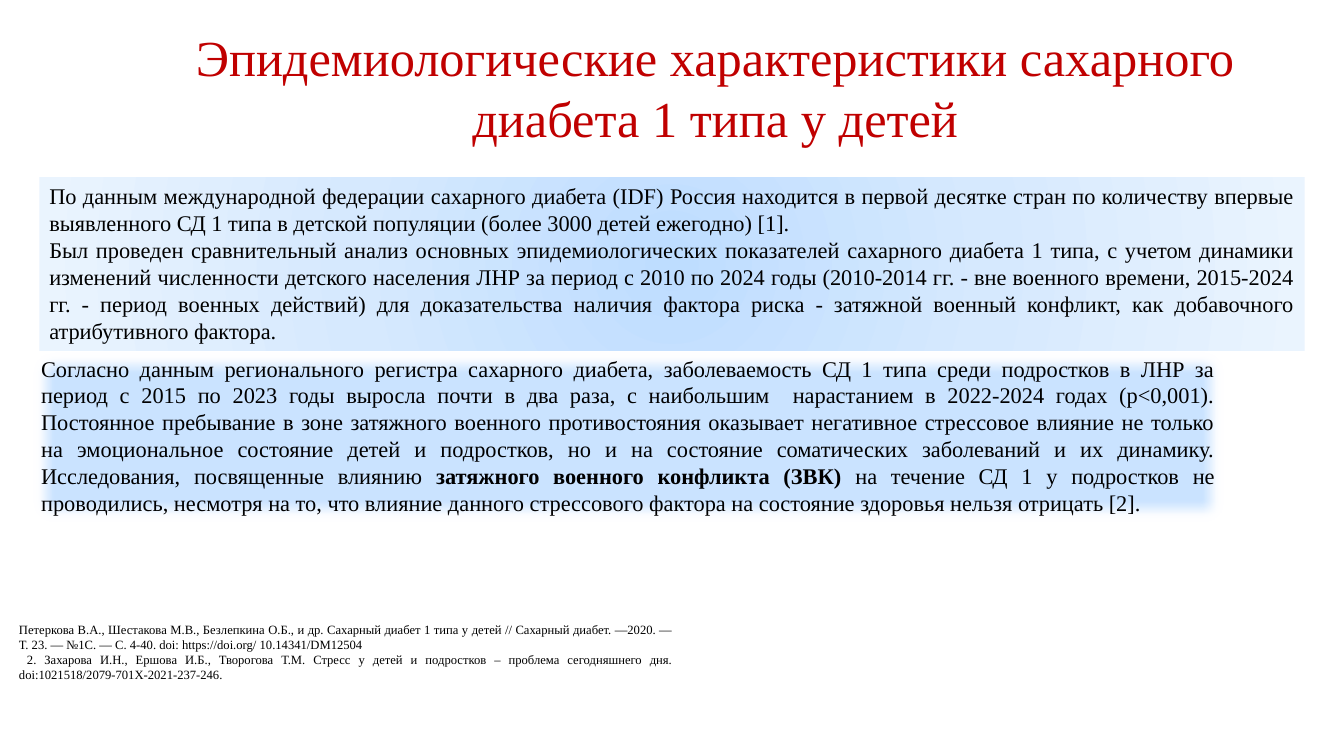
from dataclasses import dataclass

import lxml.etree
import pptx
import pptx.dml.color
import pptx.enum.shapes
import pptx.enum.text
import pptx.oxml
import pptx.oxml.ns
import pptx.util

Inches = pptx.util.Inches
ALIGN = pptx.enum.text.PP_ALIGN
NS = pptx.oxml.ns.nsdecls("a")
qn = pptx.oxml.ns.qn

COLORS = {"title": "C00000", "text": "000000", "panel": "CAE3FF", "border": "0F9ED5",
          "inner": "BEDDFF", "middle": "D6E9FE", "outer": "EAF4FE"}
FONT = "Times New Roman"


@dataclass
class Run:
    text: str
    bold: bool = False


@dataclass
class Block:
    left: float
    top: float
    width: float
    height: float
    paragraphs: list[list[Run]]


def rgb(name: str) -> pptx.dml.color.RGBColor:
    return pptx.dml.color.RGBColor.from_string(COLORS[name])


def add_run(p, text: str, *, size: float, color: str = "text", bold: bool = False) -> None:
    r = p.add_run()
    r.text = text
    r.font.name = FONT
    r.font.size = pptx.util.Pt(size)
    r.font.bold = bold
    r.font.color.rgb = rgb(color)


def fill_text(sp, block: Block, *, size: float, color: str = "text", align=ALIGN.JUSTIFY,
              anchor=pptx.enum.text.MSO_ANCHOR.TOP) -> None:
    tf = sp.text_frame
    tf.word_wrap = True
    tf.auto_size = pptx.enum.text.MSO_AUTO_SIZE.SHAPE_TO_FIT_TEXT
    tf.vertical_anchor = anchor
    for i, runs in enumerate(block.paragraphs):
        p = tf.add_paragraph() if i else tf.paragraphs[0]
        p.alignment = align
        for run in runs:
            add_run(p, run.text, size=size, color=color, bold=run.bold)


def bounds(block: Block) -> list[int]:
    return [Inches(v) for v in (block.left, block.top, block.width, block.height)]


def add_panel(slide, block: Block):
    sp = slide.shapes.add_shape(pptx.enum.shapes.MSO_SHAPE.RECTANGLE, *bounds(block))
    sp.shadow.inherit = False
    sp.fill.solid()
    sp.fill.fore_color.rgb = rgb("panel")
    sp.line.fill.background()
    fill_text(sp, block, size=16)
    return sp


def set_radial_fill(sp, names: list[str]) -> None:
    stops = "".join(
        f'<a:gs pos="{100000 * i // (len(names) - 1)}"><a:srgbClr val="{COLORS[n]}"/></a:gs>'
        for i, n in enumerate(names))
    grad = pptx.oxml.parse_xml(
        f'<a:gradFill {NS} rotWithShape="1"><a:gsLst>{stops}</a:gsLst><a:path path="circle">'
        '<a:fillToRect l="50000" t="50000" r="50000" b="50000"/></a:path></a:gradFill>')
    sp_pr = sp.element.spPr
    sp_pr.replace(sp_pr.find(qn("a:solidFill")), grad)


def set_soft_edge(sp, radius: int) -> None:
    effects = sp.element.spPr.find(qn("a:effectLst"))
    lxml.etree.SubElement(effects, qn("a:softEdge")).set("rad", str(radius))


TITLE = Block(1.25, 0.21, 11.69, 1.31, [
    [Run("Эпидемиологические характеристики сахарного диабета 1 типа у детей")]])

OVERVIEW = Block(0.39, 1.76, 12.55, 1.72, [
    [Run("По данным международной федерации сахарного диабета (IDF) Россия находится в первой "
         "десятке стран по количеству впервые выявленного СД 1 типа в детской популяции (более "
         "3000 детей ежегодно) [1].")],
    [Run("Был проведен сравнительный анализ основных эпидемиологических показателей сахарного "
         "диабета 1 типа, с учетом динамики изменений численности детского населения ЛНР за "
         "период с 2010 по 2024 годы (2010-2014 гг. - вне военного времени, 2015-2024 гг. - "
         "период военных действий) для доказательства наличия фактора риска - затяжной военный "
         "конфликт, как добавочного атрибутивного фактора.")]])

REGISTRY = Block(0.31, 3.47, 11.84, 1.72, [
    [Run("Согласно данным регионального регистра сахарного диабета, заболеваемость СД 1 типа "
         "среди подростков в ЛНР за период с 2015 по 2023 годы выросла почти в два раза, с "
         "наибольшим  нарастанием в 2022-2024 годах (р<0,001). Постоянное пребывание в зоне "
         "затяжного военного противостояния оказывает негативное стрессовое влияние не только "
         "на эмоциональное состояние детей и подростков, но и на состояние соматических "
         "заболеваний и их динамику. Исследования, посвященные влиянию "),
     Run("затяжного военного конфликта (ЗВК) ", bold=True),
     Run("на течение СД 1 у подростков не проводились, несмотря на то, что влияние данного "
         "стрессового фактора на состояние здоровья нельзя отрицать [2].")]])

REFERENCES = Block(0.09, 6.12, 6.67, 0.71, [
    [Run("Петеркова В.А., Шестакова М.В., Безлепкина О.Б., и др. Сахарный диабет 1 типа у "
         "детей // Сахарный диабет. —2020. — Т. 23. — №1С. — С. 4-40. doi: https://doi.org/ "
         "10.14341/DM12504")],
    [Run(" 2. Захарова И.Н., Ершова И.Б., Творогова Т.М. Стресс у детей и подростков – "
         "проблема сегодняшнего дня. doi:1021518/2079-701Х-2021-237-246.")]])


def main() -> None:
    prs = pptx.Presentation()
    prs.slide_width, prs.slide_height = Inches(13.33), Inches(7.5)
    slide = prs.slides.add_slide(prs.slide_layouts[5])

    # Title
    title = slide.shapes.title
    title.left, title.top, title.width, title.height = bounds(TITLE)
    fill_text(title, TITLE, size=36, color="title", align=ALIGN.CENTER)

    # Overview panel with a radial gradient
    overview = add_panel(slide, OVERVIEW)
    set_radial_fill(overview, ["inner", "middle", "outer"])

    # Registry panel with blurred edges
    registry = add_panel(slide, REGISTRY)
    registry.line.color.rgb = rgb("border")
    registry.line.width = pptx.util.Pt(1)
    set_soft_edge(registry, pptx.util.Pt(10))

    # References
    references = slide.shapes.add_textbox(*bounds(REFERENCES))
    fill_text(references, REFERENCES, size=9)

    prs.save("out.pptx")


if __name__ == "__main__":
    main()
